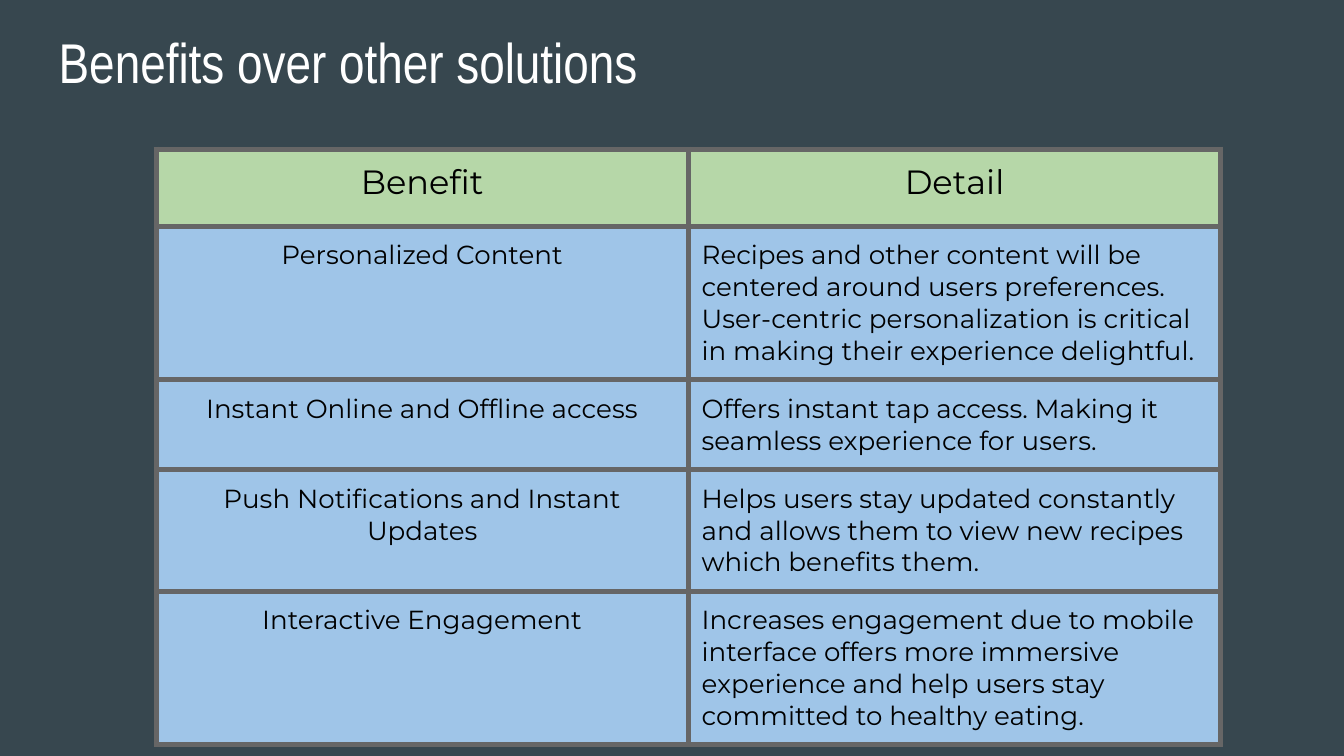
"""Build the slide on benefits over other solutions."""
from dataclasses import dataclass

from lxml import etree
from pptx import Presentation
from pptx.dml.color import RGBColor
from pptx.enum import text
from pptx.oxml import ns
from pptx.util import Cm, Pt


@dataclass(frozen=True)
class Theme:
    background: str = "37474F"
    title_color: str = "FFFFFF"
    body_color: str = "000000"
    header_fill: str = "B6D7A8"
    body_fill: str = "9FC5E8"
    border: str = "666666"
    title_font: str = "Arial Narrow"
    body_font: str = "Montserrat"
    title_size: int = 30
    header_size: int = 18
    body_size: int = 14
    border_width: int = 3


THEME = Theme()
INSET = Cm(0.25)
COLUMN_WIDTH = Cm(10.06)
ROW_HEIGHTS = (1.46, 2.9, 1.7, 2.3, 2.9)
ROWS = (
    ("Benefit", "Detail"),
    ("Personalized Content",
     "Recipes and other content will be centered around users preferences. "
     "User-centric personalization is critical in making their experience delightful."),
    ("Instant Online and Offline access",
     "Offers instant tap access. Making it seamless experience for users."),
    ("Push Notifications and Instant Updates",
     "Helps users stay updated constantly and allows them to view new recipes "
     "which benefits them."),
    ("Interactive Engagement",
     "Increases engagement due to mobile interface offers more immersive experience "
     "and help users stay committed to healthy eating."),
)


def add_run(paragraph, words, font, size, color):
    """Append a styled run to a paragraph."""
    run = paragraph.add_run()
    run.text = words
    run.font.name = font
    run.font.size = Pt(size)
    run.font.color.rgb = RGBColor.from_string(color)


def set_insets(box):
    """Give a cell or text frame equal margins."""
    box.margin_left = box.margin_right = box.margin_top = box.margin_bottom = INSET


def set_borders(cell):
    """Draw the same solid line on all sides of a cell."""
    properties = cell._tc.get_or_add_tcPr()
    for index, side in enumerate(("lnL", "lnR", "lnT", "lnB")):
        line = etree.Element(ns.qn(f"a:{side}"), w=str(Pt(THEME.border_width)))
        fill = etree.SubElement(line, ns.qn("a:solidFill"))
        etree.SubElement(fill, ns.qn("a:srgbClr"), val=THEME.border)
        properties.insert(index, line)


def add_title(slide, words):
    """Add the slide heading."""
    shape = slide.shapes.add_textbox(Cm(0.86), Cm(0.28), Cm(23.67), Cm(1.45))
    frame = shape.text_frame
    frame.word_wrap = True
    frame.vertical_anchor = text.MSO_ANCHOR.TOP
    set_insets(frame)
    add_run(frame.paragraphs[0], words, THEME.title_font, THEME.title_size, THEME.title_color)


def fill_cell(cell, words, is_header, centered):
    """Style one table cell and write its text."""
    cell.fill.solid()
    fill = THEME.header_fill if is_header else THEME.body_fill
    cell.fill.fore_color.rgb = RGBColor.from_string(fill)
    set_insets(cell)
    set_borders(cell)
    paragraph = cell.text_frame.paragraphs[0]
    paragraph.alignment = text.PP_ALIGN.CENTER if centered else text.PP_ALIGN.LEFT
    size = THEME.header_size if is_header else THEME.body_size
    add_run(paragraph, words, THEME.body_font, size, THEME.body_color)


def add_benefits_table(slide):
    """Add the table of benefits and their details."""
    table = slide.shapes.add_table(
        len(ROWS), 2, Cm(2.95), Cm(2.82), 2 * COLUMN_WIDTH, Cm(sum(ROW_HEIGHTS))
    ).table
    for column in table.columns:
        column.width = COLUMN_WIDTH
    for row_index, (height, row) in enumerate(zip(ROW_HEIGHTS, ROWS)):
        table.rows[row_index].height = Cm(height)
        is_header = row_index == 0
        for column_index, words in enumerate(row):
            centered = is_header or column_index == 0
            fill_cell(table.cell(row_index, column_index), words, is_header, centered)


def main():
    """Build and save the presentation."""
    presentation = Presentation()
    presentation.slide_width = Cm(25.4)
    presentation.slide_height = Cm(14.29)
    slide = presentation.slides.add_slide(presentation.slide_layouts[6])
    slide.background.fill.solid()
    slide.background.fill.fore_color.rgb = RGBColor.from_string(THEME.background)
    add_title(slide, "Benefits over other solutions")
    add_benefits_table(slide)
    presentation.save("out.pptx")


if __name__ == "__main__":
    main()
